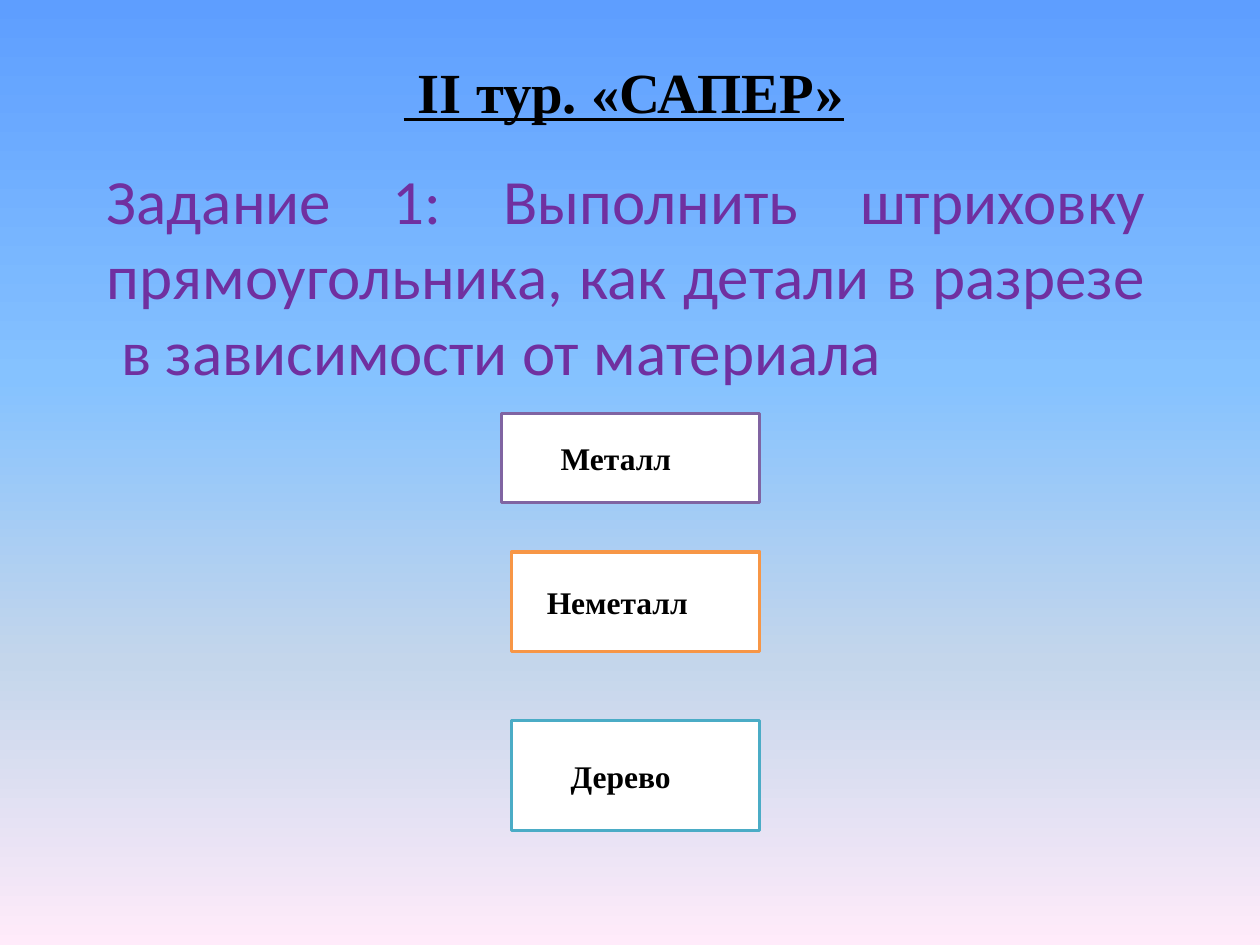
import pptx
import pptx.util
import pptx.dml.color
import pptx.enum.shapes
import pptx.enum.text
import pptx.oxml.ns
from lxml import etree
from pptx.util import Inches

COLORS = {
    "black": "000000",
    "white": "FFFFFF",
    "task": "7030A0",
    "metal": "8064A2",
    "nonmetal": "F79646",
    "wood": "4BACC6",
}
BACKGROUND_STOPS = [(0, "5E9EFF"), (40, "85C2FF"), (70, "C4D6EB"), (100, "FFEBFA")]
TITLE = " II тур. «САПЕР»"
TASK = "Задание 1: Выполнить штриховку прямоугольника, как детали в разрезе  в зависимости от материала"
MATERIALS = [
    ("Металл", "metal", 3.98, 3.28, 0.71, 0.37),
    ("Неметалл", "nonmetal", 4.06, 4.38, 0.79, 0.18),
    ("Дерево", "wood", 4.06, 5.72, 0.87, 0.37),
]
MATERIALS_RIGHT = 6.03
ALIGN = pptx.enum.text.PP_ALIGN
ANCHOR = pptx.enum.text.MSO_ANCHOR


def rgb(name):
    return pptx.dml.color.RGBColor.from_string(COLORS[name])


def paint_background(page):
    fill = page.background.fill
    fill.gradient()
    fill.gradient_angle = 270
    qn = pptx.oxml.ns.qn
    stops = next(page.background._cSld.iter(qn("a:gsLst")))
    for stop in list(stops):
        stops.remove(stop)
    for percent, color in BACKGROUND_STOPS:
        stop = etree.SubElement(stops, qn("a:gs"), pos=str(percent * 1000))
        etree.SubElement(stop, qn("a:srgbClr"), val=color)


def write(shape, text, font, size, color, align, anchor, bold=False, underline=False):
    frame = shape.text_frame
    frame.word_wrap = True
    frame.auto_size = pptx.enum.text.MSO_AUTO_SIZE.NONE
    frame.vertical_anchor = anchor
    para = frame.paragraphs[0]
    para.alignment = align
    span = para.add_run()
    span.text = text
    span.font.name = font
    span.font.size = pptx.util.Pt(size)
    span.font.bold = bold
    span.font.underline = underline
    span.font.color.rgb = rgb(color)
    return para


def add_material(page, label, color, left, top, height, indent):
    box = page.shapes.add_shape(
        pptx.enum.shapes.MSO_SHAPE.RECTANGLE,
        Inches(left), Inches(top), Inches(MATERIALS_RIGHT - left), Inches(height),
    )
    box.shadow.inherit = False
    box.fill.solid()
    box.fill.fore_color.rgb = rgb("white")
    box.line.color.rgb = rgb(color)
    box.line.width = pptx.util.Pt(2)
    write(box, label, "Times New Roman", 18, "black", ALIGN.JUSTIFY, ANCHOR.MIDDLE, bold=True)
    box.text_frame.margin_left = Inches(0.1 + indent)


def main():
    deck = pptx.Presentation()
    deck.slide_width, deck.slide_height = Inches(10), Inches(7.5)
    page = deck.slides.add_slide(deck.slide_layouts[5])
    paint_background(page)

    title = page.shapes.title
    title.left, title.top = Inches(0.7), Inches(0.23)
    title.width, title.height = Inches(8.5), Inches(1.56)
    write(title, TITLE, "Times New Roman", 32.4, "black", ALIGN.CENTER, ANCHOR.TOP,
          bold=True, underline=True)
    title.text_frame.margin_top = Inches(0.22)

    task = page.shapes.add_textbox(Inches(0.75), Inches(1.23), Inches(8.44), Inches(4.92))
    para = write(task, TASK, "Calibri", 36, "task", ALIGN.JUSTIFY, ANCHOR.TOP)
    para.space_before = pptx.util.Pt(7)

    for material in MATERIALS:
        add_material(page, *material)

    deck.save("out.pptx")


if __name__ == "__main__":
    main()
